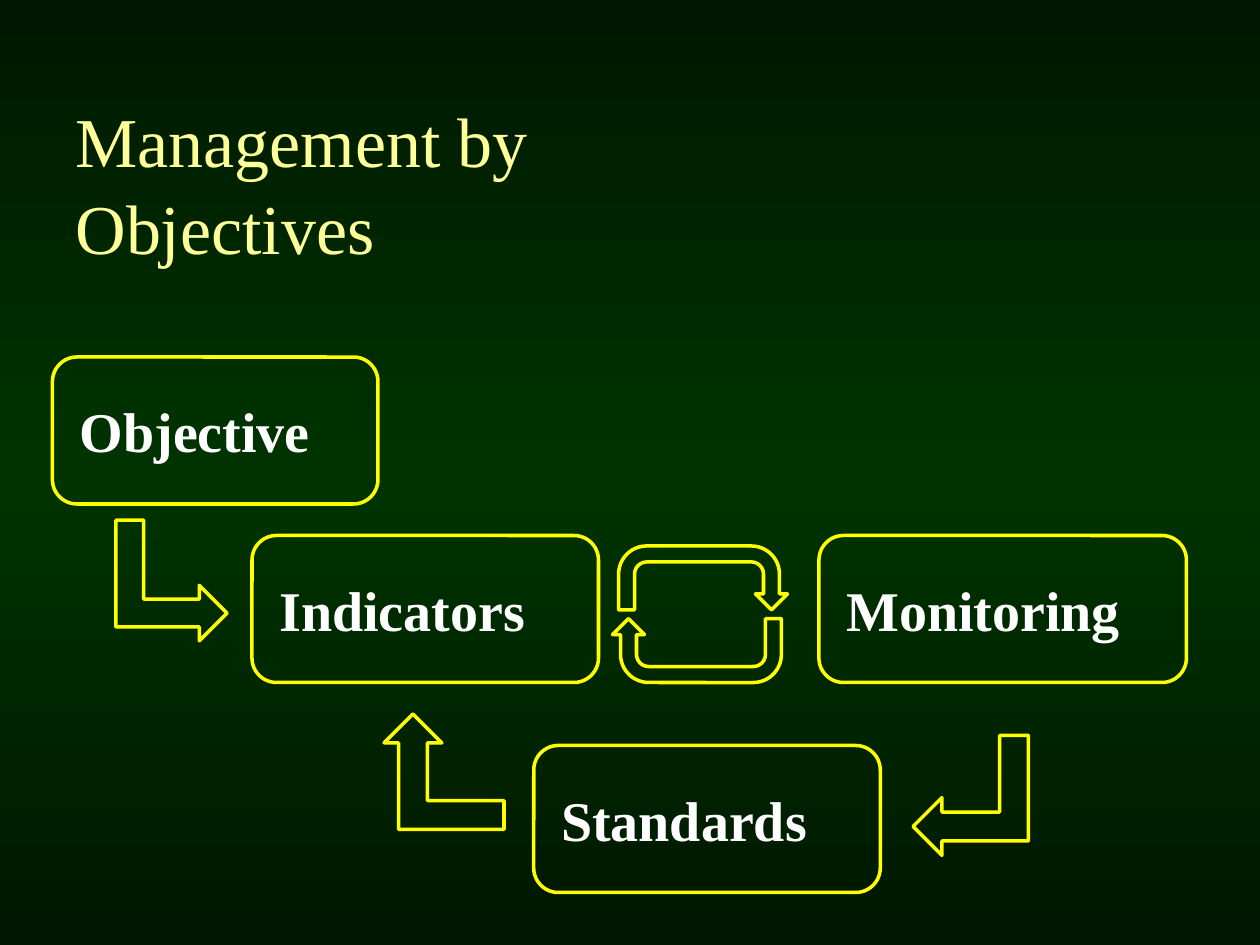
"""Build the Management by Objectives cycle slide."""
from copy import deepcopy

from pptx import Presentation
from pptx.dml.color import RGBColor
from pptx.enum.shapes import MSO_SHAPE as SHAPE
from pptx.enum.text import MSO_ANCHOR as ANCHOR, PP_ALIGN as ALIGN
from pptx.util import Pt

COLORS = {"edge": "001800", "middle": "003300", "line": "FFFF00",
          "title": "FFFF99", "text": "FFFFFF"}
FONT = "Times New Roman"


def format_text(tf, size, color, bold, anchor):
    tf.word_wrap = True
    tf.vertical_anchor = anchor
    p = tf.paragraphs[0]
    p.alignment = ALIGN.LEFT
    font = p.runs[0].font
    font.name, font.size, font.bold = FONT, Pt(size), bold
    font.color.rgb = RGBColor.from_string(COLORS[color])


def add_outline(kind, left, top, width, height):
    sp = s.shapes.add_shape(kind, Pt(left), Pt(top), Pt(width), Pt(height))
    sp.shadow.inherit = False
    sp.fill.background()
    sp.line.color.rgb = RGBColor.from_string(COLORS["line"])
    sp.line.width = Pt(2)
    return sp


prs = Presentation()
prs.slide_width, prs.slide_height = Pt(720), Pt(540)
s = prs.slides.add_slide(prs.slide_layouts[5])

fill = s.background.fill
fill.gradient()
fill.gradient_angle = 90
stop_list = fill.gradient_stops[0]._gs.getparent()
stop_list.append(deepcopy(stop_list[0]))
for stop, position, color in zip(fill.gradient_stops, (0, 0.5, 1),
                                 ("edge", "middle", "edge")):
    stop.position = position
    stop.color.rgb = RGBColor.from_string(COLORS[color])

title = s.shapes.title
title.left, title.top, title.width, title.height = Pt(36), Pt(50), Pt(324), Pt(72)
title.text_frame.text = "Management by Objectives"
title.text_frame.paragraphs[0].line_spacing = 1.04
format_text(title.text_frame, 40, "title", False, ANCHOR.TOP)

boxes = [
    ("Objective", 30, 204, 186),
    ("Indicators", 144, 306, 198),
    ("Monitoring", 468, 306, 210),
    ("Standards", 305, 426, 198),
]
for label, left, top, width in boxes:
    sp = add_outline(SHAPE.ROUNDED_RECTANGLE, left, top, width, 84)
    tf = sp.text_frame
    tf.text = label
    tf.margin_left = Pt(11.5)
    format_text(tf, 32, "text", True, ANCHOR.MIDDLE)

bent_arrows = [
    (63.5, 300, 69, 63.5, 90, False),
    (520.5, 421.5, 68.5, 66, 90, True),
    (219.5, 408, 68.5, 66, 180, True),
]
for left, top, width, height, rotation, flipped in bent_arrows:
    sp = add_outline(SHAPE.BENT_UP_ARROW, left, top, width, height)
    sp.rotation = rotation
    if flipped:
        sp._element.spPr.xfrm.set("flipV", "1")

for left, top, rotation in [(350, 353.5, 180), (353.5, 312, 0)]:
    sp = add_outline(SHAPE.U_TURN_ARROW, left, top, 96.5, 36.5)
    sp.rotation = rotation
    sp.adjustments[3] = 0.44
    sp.adjustments[4] = 1

prs.save("out.pptx")
